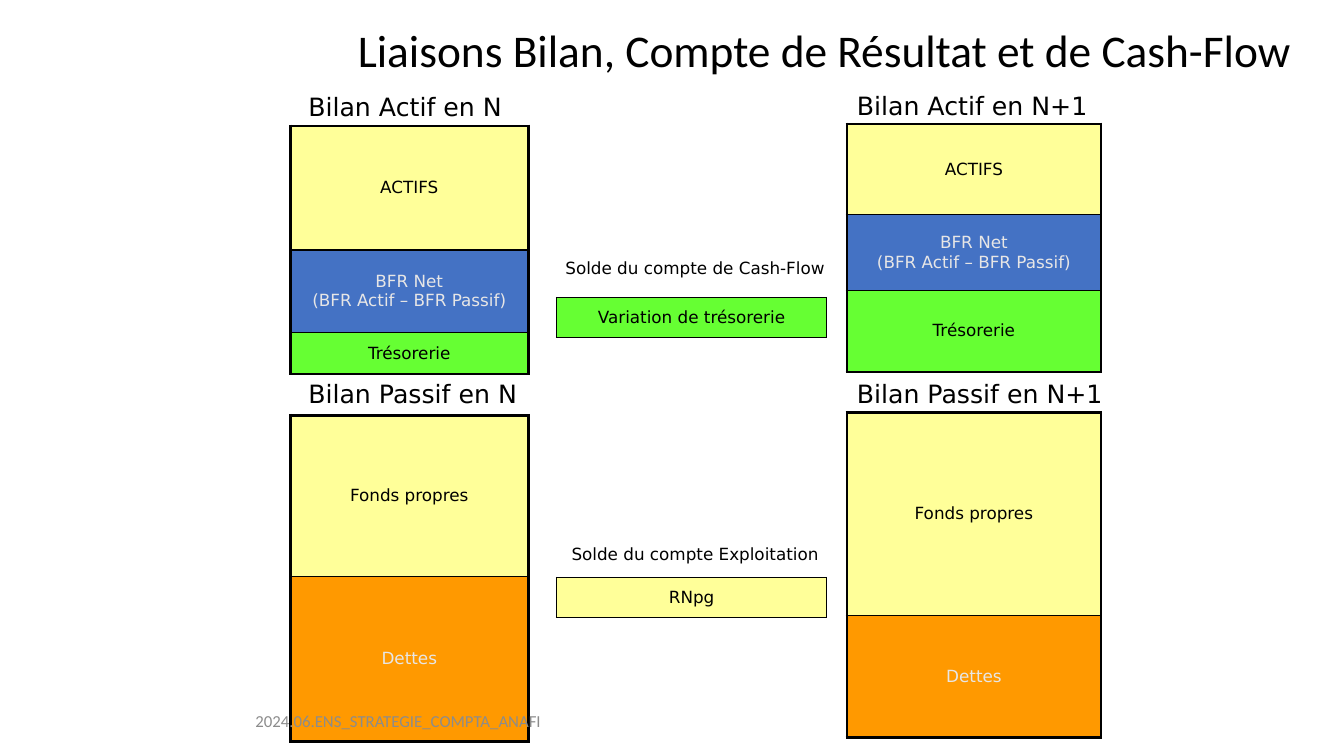
import pptx
import pptx.dml.color
import pptx.enum.text
import pptx.oxml
import pptx.oxml.ns
import pptx.util

EMU_PER_PX = 9144  # 100 px to the inch
COLOURS = {
    "black": "000000", "light": "E7E6E6", "grey": "8C8C8C", "yellow": "FFFF99",
    "blue": "4472C4", "green": "66FF33", "orange": "FF9900",
}
ALIGN = pptx.enum.text.PP_ALIGN
ANCHOR = pptx.enum.text.MSO_ANCHOR
SANS = "DejaVu Sans"
BFR = "BFR Net\n(BFR Actif – BFR Passif)"
THICK, THIN = 2.25, 1


def px(length):
    return pptx.util.Emu(length * EMU_PER_PX)


def rgb(name):
    return pptx.dml.color.RGBColor.from_string(COLOURS[name])


def write(para, text, size, font, colour, align):
    para.alignment = align
    for number, line in enumerate(text.split("\n")):
        if number:
            para.add_line_break()
        span = para.add_run()
        span.text = line
        span.font.size = pptx.util.Pt(size)
        span.font.name = font
        span.font.color.rgb = rgb(colour)


def add_label(page, box, text, size=12, font=SANS, colour="black",
              align=ALIGN.CENTER, anchor=ANCHOR.TOP):
    frame = page.shapes.add_textbox(*map(px, box)).text_frame
    frame.word_wrap = True
    frame.vertical_anchor = anchor
    write(frame.paragraphs[0], text, size, font, colour, align)
    return frame.paragraphs[0]


def set_borders(cell, widths):
    """Draw left, right, top and bottom edges; a width of 0 hides the edge."""
    properties = cell._tc.get_or_add_tcPr()
    for position, (side, width) in enumerate(zip("LRTB", widths)):
        paint = (f'<a:solidFill><a:srgbClr val="{COLOURS["black"]}"/></a:solidFill>'
                 if width else "<a:noFill/>")
        edge = pptx.oxml.parse_xml(
            f'<a:ln{side} {pptx.oxml.ns.nsdecls("a")} w="{pptx.util.Pt(width)}">'
            f"{paint}</a:ln{side}>")
        properties.insert(position, edge)


def add_stack(page, left, top, width, rows, outline):
    """Stack rows of (height, text, fill, text colour); text None leaves a gap."""
    total = sum(row[0] for row in rows)
    table = page.shapes.add_table(
        len(rows), 1, px(left), px(top), px(width), px(total)).table
    table.first_row = table.horz_banding = False
    filled = [False] + [row[1] is not None for row in rows] + [False]
    edges = [THIN if above and below else outline if above or below else 0
             for above, below in zip(filled, filled[1:])]
    for index, (height, text, fill, colour) in enumerate(rows):
        table.rows[index].height = px(height)
        cell = table.cell(index, 0)
        cell.vertical_anchor = ANCHOR.MIDDLE
        side = 0
        if text is None:
            cell.fill.background()
        else:
            side = outline
            cell.fill.solid()
            cell.fill.fore_color.rgb = rgb(fill)
            write(cell.text_frame.paragraphs[0], text, 12, SANS, colour, ALIGN.CENTER)
        set_borders(cell, (side, side, edges[index], edges[index + 1]))


def add_balance_sheet(page, box, heights, year, label_left, assets_top):
    """Assets above liabilities for one year, each under its heading."""
    left, top, width = box
    contents = [
        ("ACTIFS", "yellow", "black"), (BFR, "blue", "light"),
        ("Trésorerie", "green", "black"), (None, None, None),
        ("Fonds propres", "yellow", "black"), ("Dettes", "orange", "light"),
    ]
    rows = [(height, *content) for height, content in zip(heights, contents)]
    add_stack(page, left, top, width, rows, THICK)
    for side, label_top in (("Actif", assets_top), ("Passif", 370)):
        add_label(page, (label_left, label_top, 307, 40), f"Bilan {side} en {year}",
                  size=18, align=ALIGN.LEFT)


def add_flows(page, left, top, width):
    """Cash-flow and income balances that link the two years."""
    gap = (None, None, None)
    rows = [
        (155, *gap), (40, "Variation de trésorerie", "green", "black"),
        (238, *gap), (40, "RNpg", "yellow", "black"), (119, *gap),
    ]
    add_stack(page, left, top, width, rows, THIN)
    for offset, text in ((111, "Solde du compte de Cash-Flow"),
                         (395, "Solde du compte Exploitation")):
        add_label(page, (left - 12, top + offset, 299, 30), text)


def main():
    deck = pptx.Presentation()
    deck.slide_width, deck.slide_height = px(1333), px(750)
    page = deck.slides.add_slide(deck.slide_layouts[6])
    title = add_label(page, (345, 18, 988, 69),
                      "Liaisons Bilan, Compte de Résultat et de Cash-Flow",
                      size=32.4, font="Calibri", align=ALIGN.LEFT, anchor=ANCHOR.MIDDLE)
    title.line_spacing = 0.9
    add_flows(page, 552, 140, 268)
    add_balance_sheet(page, (288, 125, 236), (123, 82, 41, 41, 160, 164), "N", 296, 86)
    add_balance_sheet(page, (840, 123, 252), (90, 75, 81, 40, 202, 121), "N+1", 840, 85)
    add_label(page, (170, 695, 450, 40), "2024.06.ENS_STRATEGIE_COMPTA_ANAFI",
              font="Calibri", colour="grey", anchor=ANCHOR.MIDDLE)
    deck.save("out.pptx")


if __name__ == "__main__":
    main()
